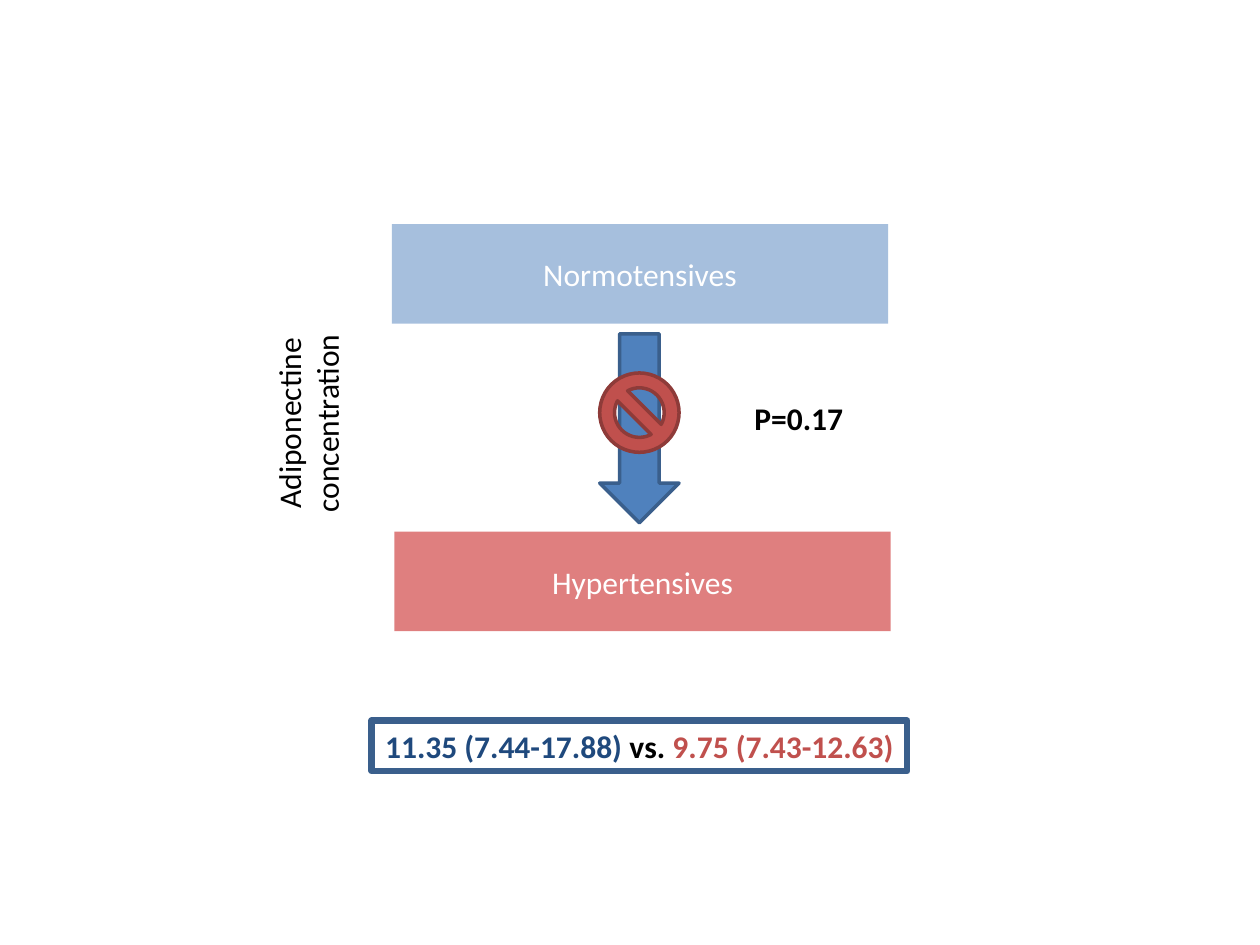
from pptx import Presentation
from pptx.dml.color import RGBColor
from pptx.enum.shapes import MSO_SHAPE
from pptx.enum.text import MSO_ANCHOR, MSO_AUTO_SIZE, PP_ALIGN
from pptx.oxml.ns import qn
from pptx.util import Inches, Pt
from lxml import etree

RECTANGLE = MSO_SHAPE.RECTANGLE
DOWN_ARROW = MSO_SHAPE.DOWN_ARROW
NO_SYMBOL = MSO_SHAPE.NO_SYMBOL
TOP, MIDDLE = MSO_ANCHOR.TOP, MSO_ANCHOR.MIDDLE
GROW = MSO_AUTO_SIZE.SHAPE_TO_FIT_TEXT
CENTER = PP_ALIGN.CENTER

WHITE = RGBColor(0xFF, 0xFF, 0xFF)
BLACK = RGBColor(0x00, 0x00, 0x00)
BLUE = RGBColor(0x4F, 0x81, 0xBD)
BLUE_EDGE = RGBColor(0x3A, 0x5F, 0x8C)
NAVY = RGBColor(0x1F, 0x49, 0x7D)
RED = RGBColor(0xC0, 0x50, 0x4D)
RED_EDGE = RGBColor(0x8E, 0x3B, 0x39)
DEEP_RED = RGBColor(0xC0, 0x00, 0x00)

deck = Presentation()
deck.slide_width, deck.slide_height = Inches(10), Inches(7.5)
page = deck.slides.add_slide(deck.slide_layouts[6])

# Grid of 100 columns by 100 rows
COLUMN = deck.slide_width / 100
ROW = deck.slide_height / 100


def add_part(kind, left, top, width, height, fill=None, alpha=None, line=None, weight=2):
    """Place a shape, or a text box when kind is None, in grid units."""
    area = [round(n) for n in (left * COLUMN, top * ROW, width * COLUMN, height * ROW)]
    if kind is None:
        return page.shapes.add_textbox(*area)
    shape = page.shapes.add_shape(kind, *area)
    shape.shadow.inherit = False
    if fill is None:
        shape.fill.background()
    else:
        shape.fill.solid()
        shape.fill.fore_color.rgb = fill
    if alpha is not None:
        color = shape.fill._xPr.find(qn("a:solidFill"))[0]
        etree.SubElement(color, qn("a:alpha"), val=str(alpha * 1000))
    if line is None:
        shape.line.fill.background()
    else:
        shape.line.color.rgb = line
        shape.line.width = Pt(weight)
    return shape


def write(box, *spans, bold=False, anchor=TOP, grow=True):
    """Write (text, color) spans as one centred paragraph."""
    frame = box.text_frame
    frame.word_wrap = True
    frame.vertical_anchor = anchor
    if grow:
        frame.auto_size = GROW
    para = frame.paragraphs[0]
    para.alignment = CENTER
    for text, color in spans:
        span = para.add_run()
        span.text = text
        span.font.name = "Calibri"
        span.font.size = Pt(18)
        span.font.bold = bold
        span.font.color.rgb = color


# Patient groups
for name, left, top, fill in (
    ("Normotensives", 31.1, 23.73, BLUE),
    ("Hypertensives", 31.3, 56.27, DEEP_RED),
):
    group = add_part(RECTANGLE, left, top, 39.4, 10.53, fill=fill, alpha=50)
    write(group, (name, WHITE), anchor=MIDDLE, grow=False)

# Arrow between the groups
add_part(DOWN_ARROW, 47.6, 35.33, 6.3, 20, fill=BLUE, line=BLUE_EDGE)

# Vertical axis label
axis_label = add_part(None, 20.9, 26.93, 8.1, 35.73)
write(axis_label, ("Adiponectine concentration", BLACK))
axis_label.text_frame._txBody.bodyPr.set("vert", "vert270")

# No significant difference
add_part(NO_SYMBOL, 47.6, 39.47, 6.3, 8.4, fill=RED, line=RED_EDGE)
p_value = add_part(None, 56.3, 41.6, 14.2, 5.33)
write(p_value, ("P=0.17", BLACK), bold=True)

# Framed comparison of values
result = add_part(RECTANGLE, 29.5, 76.27, 42.5, 5.33, line=BLUE_EDGE, weight=3.75)
write(
    result,
    ("11.35 (7.44-17.88)", NAVY),
    (" vs. ", BLACK),
    ("9.75 (7.43-12.63)", RED),
    bold=True,
)

deck.save("out.pptx")
